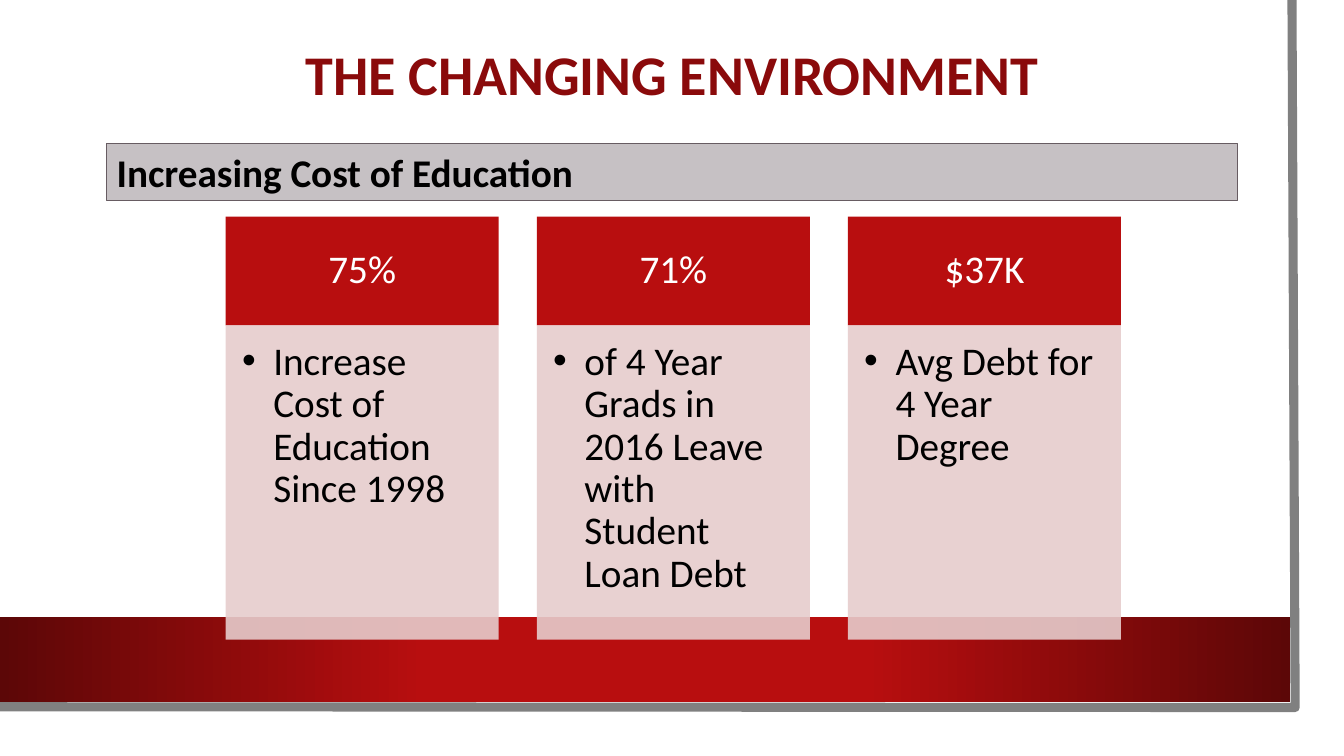
import pptx
import pptx.util
import pptx.dml.color
import pptx.enum.shapes
import pptx.enum.text
import pptx.oxml
import pptx.oxml.ns
from pptx.util import Cm, Pt

COLORS = {
    "red": "B80E0F",
    "dark_red": "5C0707",
    "title": "8A0A0B",
    "pink": "E6CCCC",
    "bar": "C6C1C4",
    "bar_line": "675C62",
    "frame": "808080",
    "white": "FFFFFF",
    "black": "000000",
}
CARDS = [
    ("75%", "Increase Cost of Education Since 1998"),
    ("71%", "of 4 Year Grads in 2016 Leave with Student Loan Debt"),
    ("$37K", "Avg Debt for 4 Year Degree"),
]
ALIGN = pptx.enum.text.PP_ALIGN
ANCHOR = pptx.enum.text.MSO_ANCHOR


def rgb(name):
    return pptx.dml.color.RGBColor.from_string(COLORS[name])


def add_xml(parent, tag, **attrs):
    el = pptx.oxml.ns.qn(tag)
    el = parent.makeelement(el, attrs)
    parent.append(el)
    return el


def add_rect(s, left, top, width, height, fill, line=None):
    sp = s.shapes.add_shape(
        pptx.enum.shapes.MSO_SHAPE.RECTANGLE,
        Cm(left), Cm(top), Cm(width), Cm(height))
    sp.shadow.inherit = False
    sp.fill.solid()
    sp.fill.fore_color.rgb = rgb(fill)
    if line:
        sp.line.color.rgb = rgb(line)
        sp.line.width = Pt(0.75)
    else:
        sp.line.fill.background()
    return sp


def set_text(sp, text, color, size=28, bold=False, align=ALIGN.LEFT,
             anchor=ANCHOR.TOP, insets=(0.25, 0.13, 0.25, 0.13),
             spacing=1.0, bullet=False, wrap=True):
    tf = sp.text_frame
    tf.text = text
    tf.word_wrap = wrap
    tf.vertical_anchor = anchor
    tf.margin_left, tf.margin_top, tf.margin_right, tf.margin_bottom = map(Cm, insets)
    p = tf.paragraphs[0]
    p.alignment = align
    p.line_spacing = spacing
    if bullet:
        pPr = p._p.get_or_add_pPr()
        pPr.set("marL", str(Cm(0.79)))
        pPr.set("indent", str(-Cm(0.79)))
        add_xml(pPr, "a:buFont", typeface="Arial")
        add_xml(pPr, "a:buChar", char="•")
    r = p.runs[0]
    r.font.name = "Calibri"
    r.font.size = Pt(size)
    r.font.bold = bold
    r.font.color.rgb = rgb(color)


def add_frame(s):
    fb = s.shapes.build_freeform(Cm(32.56), 0)
    fb.add_line_segments(
        [(Cm(32.64), Cm(17.83)), (Cm(-0.08), Cm(17.81))], close=False)
    sp = fb.convert_to_shape()
    sp.shadow.inherit = False
    sp.fill.background()
    sp.line.color.rgb = rgb("frame")
    sp.line.width = Pt(6.5)


def add_band(s):
    sp = add_rect(s, 0, 15.54, 32.51, 2.16, "red")
    sp.fill.gradient()
    sp.fill.gradient_angle = 0
    gs_lst = sp._element.spPr.find(".//" + pptx.oxml.ns.qn("a:gsLst"))
    for gs in list(gs_lst):
        gs_lst.remove(gs)
    for pos, color in ((0, "dark_red"), (33, "red"), (67, "red"), (100, "dark_red")):
        gs = add_xml(gs_lst, "a:gs", pos=str(pos * 1000))
        add_xml(gs, "a:srgbClr", val=COLORS[color])


def add_title(s, text):
    sp = s.shapes.add_textbox(Cm(7.06), Cm(0.86), Cm(19.76), Cm(1.96))
    set_text(sp, text, "title", size=40, bold=True, align=ALIGN.CENTER, wrap=False)


def add_card(s, left, figure, caption):
    head = add_rect(s, left, 5.46, 6.88, 2.74, "red")
    set_text(head, figure, "white", align=ALIGN.CENTER, anchor=ANCHOR.MIDDLE,
             insets=(0.56, 0.3, 0.56, 0.3), spacing=0.9)
    body = add_rect(s, left, 8.2, 6.88, 7.92, "pink")
    clr = body._element.spPr.find(".//" + pptx.oxml.ns.qn("a:srgbClr"))
    add_xml(clr, "a:alpha", val="90000")
    set_text(body, caption, "black", insets=(0.41, 0.41, 0.56, 0.61),
             spacing=0.9, bullet=True)


def main():
    prs = pptx.Presentation()
    prs.slide_width, prs.slide_height = Cm(33.87), Cm(19.05)
    s = prs.slides.add_slide(prs.slide_layouts[6])
    add_frame(s)
    add_band(s)
    add_title(s, "THE CHANGING ENVIRONMENT")
    bar = add_rect(s, 2.69, 3.61, 28.5, 1.45, "bar", "bar_line")
    set_text(bar, "Increasing Cost of Education", "black", bold=True)
    for i, (figure, caption) in enumerate(CARDS):
        add_card(s, 5.69 + 7.84 * i, figure, caption)
    prs.save("out.pptx")


if __name__ == "__main__":
    main()
